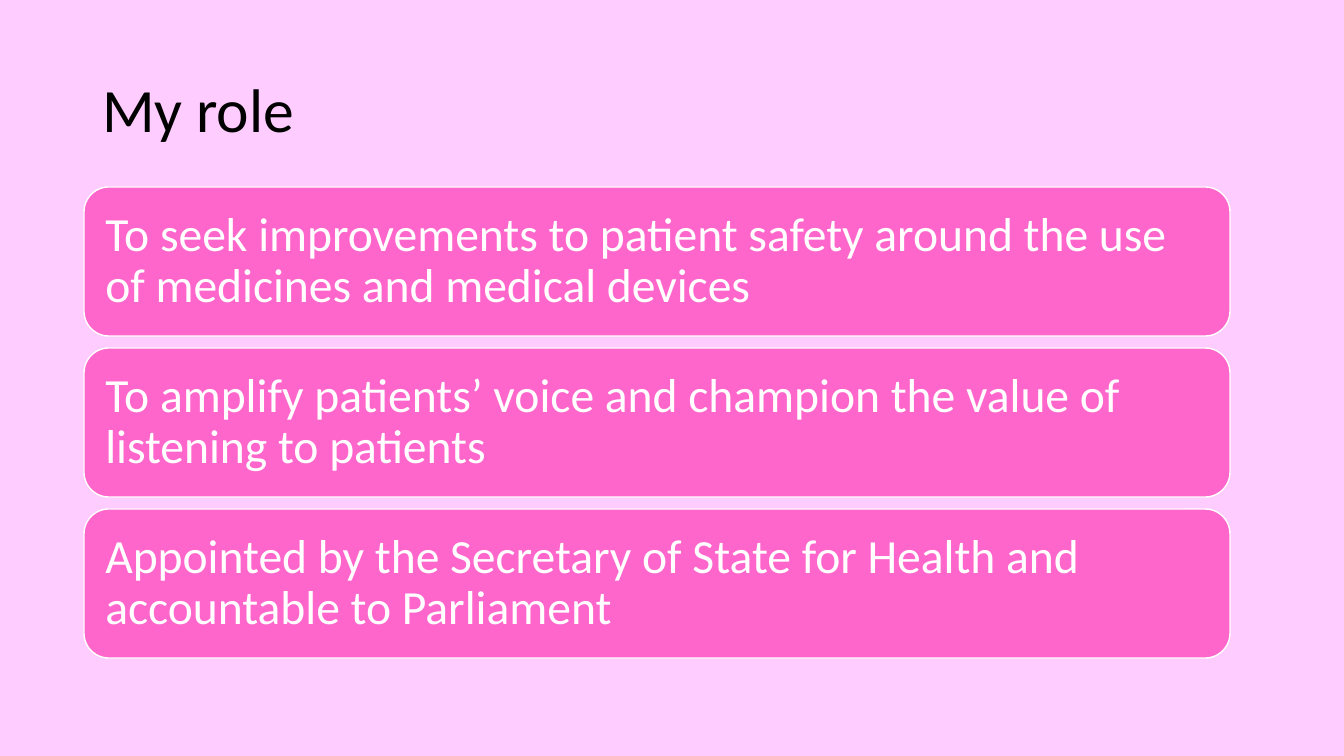
from pptx import Presentation
from pptx.dml.color import RGBColor
from pptx.enum.shapes import MSO_SHAPE
from pptx.enum.text import MSO_ANCHOR, MSO_AUTO_SIZE, PP_ALIGN
from pptx.util import Pt

ROUNDED = MSO_SHAPE.ROUNDED_RECTANGLE
MIDDLE = MSO_ANCHOR.MIDDLE
NO_FIT = MSO_AUTO_SIZE.NONE
LEFT = PP_ALIGN.LEFT

SLIDE_WIDTH, SLIDE_HEIGHT = 1344, 756
EMU_PER_PX = 12192000 / SLIDE_WIDTH

PALE_PINK = RGBColor(0xFF, 0xCC, 0xFF)
HOT_PINK = RGBColor(0xFF, 0x66, 0xCC)
WHITE = RGBColor(0xFF, 0xFF, 0xFF)
BLACK = RGBColor(0x00, 0x00, 0x00)

FONT = "Calibri"
CARD_LEFT, CARD_TOP, CARD_WIDTH, CARD_HEIGHT = 84, 187, 1146, 149
CARD_PITCH = 161
CARD_MARGIN = 14

DUTIES = [
    "To seek improvements to patient safety around the use of medicines and medical devices",
    "To amplify patients’ voice and champion the value of listening to patients",
    "Appointed by the Secretary of State for Health and accountable to Parliament",
]


def px(length):
    return round(length * EMU_PER_PX)


def write_text(shape, text, size, color):
    frame = shape.text_frame
    frame.text = text
    frame.word_wrap = True
    frame.auto_size = NO_FIT
    frame.vertical_anchor = MIDDLE
    paragraph = frame.paragraphs[0]
    paragraph.alignment = LEFT
    paragraph.line_spacing = 0.9
    paragraph.font.name = FONT
    paragraph.font.size = Pt(size)
    paragraph.font.color.rgb = color


def place_title(slide, text):
    title = slide.shapes.title
    title.left, title.top = px(92), px(40)
    title.width, title.height = px(1159), px(146)
    write_text(title, text, 44, BLACK)


def add_duty_card(slide, top, duty):
    card = slide.shapes.add_shape(
        ROUNDED, px(CARD_LEFT), px(top), px(CARD_WIDTH), px(CARD_HEIGHT))
    card.shadow.inherit = False
    card.fill.solid()
    card.fill.fore_color.rgb = HOT_PINK
    card.line.color.rgb = WHITE
    card.line.width = Pt(1)
    frame = card.text_frame
    frame.margin_left = frame.margin_right = px(CARD_MARGIN)
    frame.margin_top = frame.margin_bottom = px(CARD_MARGIN)
    write_text(card, duty, 34, WHITE)


def main():
    presentation = Presentation()
    presentation.slide_width = px(SLIDE_WIDTH)
    presentation.slide_height = px(SLIDE_HEIGHT)
    title_only = presentation.slide_layouts.get_by_name("Title Only")
    slide = presentation.slides.add_slide(title_only)
    slide.background.fill.solid()
    slide.background.fill.fore_color.rgb = PALE_PINK

    place_title(slide, "My role")
    for row, duty in enumerate(DUTIES):
        add_duty_card(slide, CARD_TOP + row * CARD_PITCH, duty)

    presentation.save("out.pptx")


if __name__ == "__main__":
    main()
